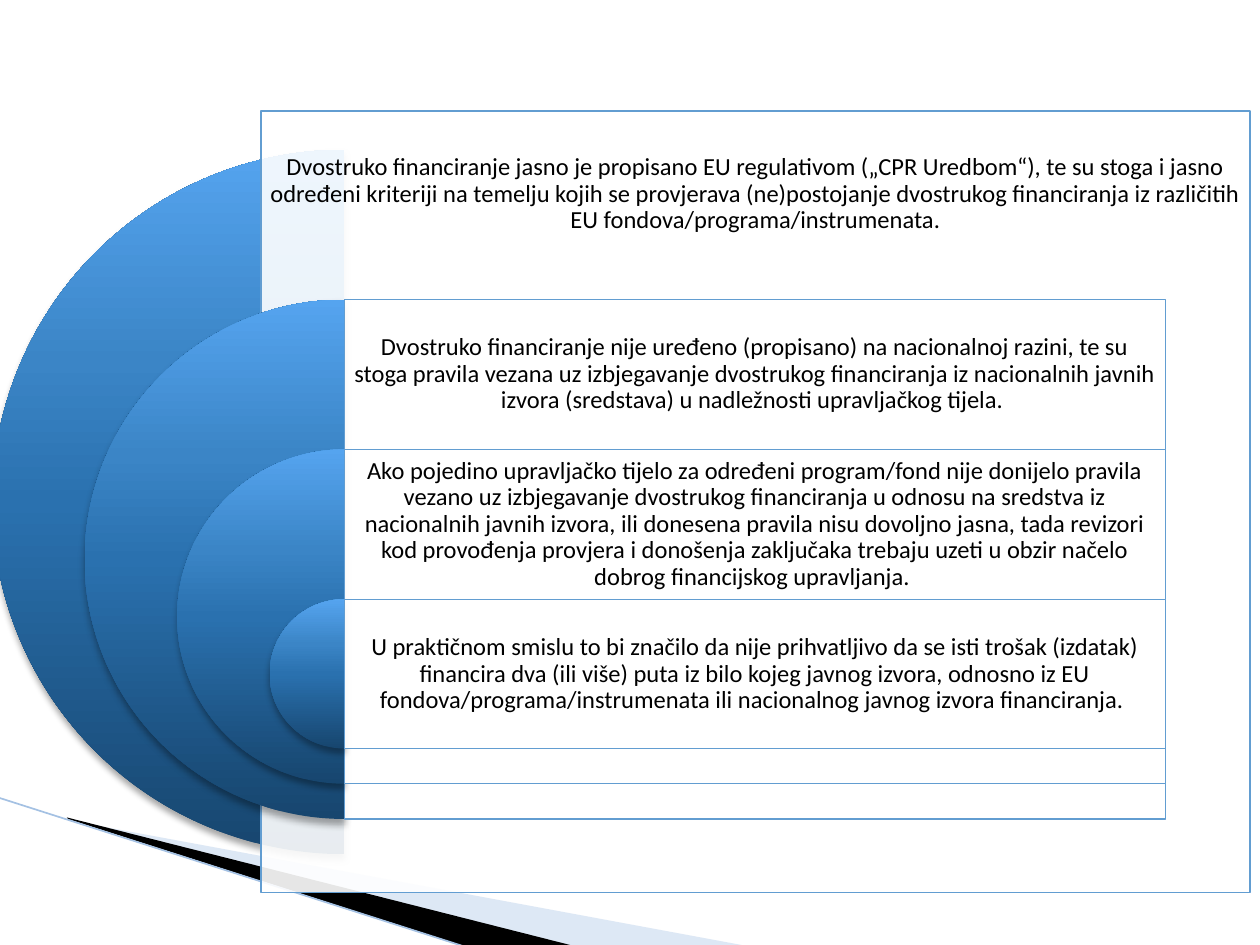
from lxml import etree
from pptx import Presentation
from pptx.dml.color import RGBColor
from pptx.enum.shapes import MSO_CONNECTOR, MSO_SHAPE
from pptx.enum.text import MSO_ANCHOR, PP_ALIGN
from pptx.oxml import parse_xml
from pptx.oxml.ns import nsdecls, qn
from pptx.util import Cm, Pt

WHITE = RGBColor(0xFF, 0xFF, 0xFF)
BLACK = RGBColor(0, 0, 0)
PANEL_BLUE = RGBColor(0x62, 0x9D, 0xD1)
SWOOSH_BLUE = RGBColor(0xAB, 0xC6, 0xE6)
EDGE_BLUE = RGBColor(0xA4, 0xC1, 0xE3)
PIE_STOPS = [
    (0, RGBColor(0x17, 0x46, 0x6F)),
    (50, RGBColor(0x2A, 0x71, 0xAF)),
    (70, RGBColor(0x3B, 0x85, 0xC6)),
    (100, RGBColor(0x55, 0xA4, 0xEF)),
]

STATEMENTS = [
    "Dvostruko financiranje jasno je propisano EU regulativom („CPR Uredbom“), te su stoga "
    "i jasno određeni kriteriji na temelju kojih se provjerava (ne)postojanje dvostrukog "
    "financiranja iz različitih EU fondova/programa/instrumenata.",
    "Dvostruko financiranje nije uređeno (propisano) na nacionalnoj razini, te su stoga "
    "pravila vezana uz izbjegavanje dvostrukog financiranja iz nacionalnih javnih izvora "
    "(sredstava) u nadležnosti upravljačkog tijela. ",
    "Ako pojedino upravljačko tijelo za određeni program/fond nije donijelo pravila vezano "
    "uz izbjegavanje dvostrukog financiranja u odnosu na sredstva iz nacionalnih javnih "
    "izvora, ili donesena pravila nisu dovoljno jasna, tada revizori kod provođenja provjera "
    "i donošenja zaključaka trebaju uzeti u obzir načelo dobrog financijskog upravljanja. ",
    "U praktičnom smislu to bi značilo da nije prihvatljivo da se isti trošak (izdatak) "
    "financira dva (ili više) puta iz bilo kojeg javnog izvora, odnosno iz EU "
    "fondova/programa/instrumenata ili nacionalnog javnog izvora financiranja. ",
]


def set_solid_fill(shape, color, opacity=100):
    """Fill a shape with one colour at the given opacity in percent."""
    shape.fill.solid()
    shape.fill.fore_color.rgb = color
    if opacity < 100:
        color_element = shape.element.spPr.find(qn("a:solidFill"))[0]
        etree.SubElement(color_element, qn("a:alpha"), val=str(opacity * 1000))


def add_swoosh(slide, left, top, points, color, opacity=100):
    """Draw a closed outline whose points are relative to left and top."""
    outline = [(left + Cm(x), top + Cm(y)) for x, y in points]
    builder = slide.shapes.build_freeform(*outline[0])
    builder.add_line_segments(outline[1:], close=True)
    swoosh = builder.convert_to_shape()
    swoosh.shadow.inherit = False
    set_solid_fill(swoosh, color, opacity)
    swoosh.line.fill.background()


def add_corner(slide, left, top):
    """Draw the pointed bands and the edge line in the bottom left corner."""
    add_swoosh(slide, left, top,
               [(1.4, 0.46), (15.11, 3), (11.58, 3), (1.4, 0.43)], SWOOSH_BLUE, 40)
    add_swoosh(slide, left, top,
               [(1.35, 0.4), (11.61, 3), (9.45, 3.02), (1.37, 0.43)], BLACK)
    edge = slide.shapes.add_connector(
        MSO_CONNECTOR.STRAIGHT, left - Cm(0.03), top, left + Cm(9.42), top + Cm(3.02))
    edge.line.color.rgb = EDGE_BLUE
    edge.line.width = Pt(0.95)
    etree.SubElement(edge.element.spPr, qn("a:effectLst"))


def add_half_disc(slide, left, top, diameter):
    """Draw the left half of a disc with a vertical gradient and a soft shadow."""
    disc = slide.shapes.add_shape(MSO_SHAPE.PIE, left, top, diameter, diameter)
    disc.adjustments[0] = 54
    disc.adjustments[1] = 162
    stops = "".join(
        f'<a:gs pos="{position * 1000}"><a:srgbClr val="{color}"/></a:gs>'
        for position, color in PIE_STOPS)
    properties = disc.element.spPr
    properties.append(parse_xml(
        f'<a:gradFill {nsdecls("a")} rotWithShape="1"><a:gsLst>{stops}</a:gsLst>'
        '<a:lin ang="16200000" scaled="0"/></a:gradFill>'))
    disc.line.fill.background()
    properties.append(parse_xml(
        f'<a:effectLst {nsdecls("a")}><a:outerShdw blurRad="{Pt(4)}" dist="{Pt(3)}" '
        'dir="5400000" rotWithShape="0"><a:srgbClr val="000000">'
        '<a:alpha val="35000"/></a:srgbClr></a:outerShdw></a:effectLst>'))


def add_statement(slide, left, top, width, height, text_height, statement):
    """Draw a framed panel with the statement centred in its upper part."""
    panel = slide.shapes.add_shape(MSO_SHAPE.RECTANGLE, left, top, width, height)
    panel.shadow.inherit = False
    set_solid_fill(panel, WHITE, 90)
    panel.line.color.rgb = PANEL_BLUE
    panel.line.width = Pt(0.75)

    frame = slide.shapes.add_textbox(left, top, width, text_height).text_frame
    frame.word_wrap = True
    frame.vertical_anchor = MSO_ANCHOR.MIDDLE
    frame.margin_left = frame.margin_right = Cm(0.15)
    frame.margin_top = frame.margin_bottom = Cm(0.15)
    frame.text = statement
    paragraph = frame.paragraphs[0]
    paragraph.alignment = PP_ALIGN.CENTER
    paragraph.line_spacing = 0.9
    paragraph.space_after = Pt(4.9)
    font = paragraph.runs[0].font
    font.name = "Calibri"
    font.size = Pt(14)
    font.color.rgb = BLACK


def add_nested_discs(slide, left, top, diameter):
    """Nest the half discs on one vertical axis, each with its statement."""
    axis = left + diameter // 2
    row_height = Cm(3.02)
    shrink = Cm(3.73)
    for level, statement in enumerate(STATEMENTS):
        size = diameter - level * shrink
        row_top = top + level * row_height
        add_half_disc(slide, axis - size // 2, row_top, size)
        if level == 0:
            add_statement(slide, axis - Cm(1.68), row_top - Cm(0.78),
                          Cm(19.94), Cm(15.75), Cm(3.35), statement)
        else:
            add_statement(slide, axis, row_top, Cm(16.56), size, row_height, statement)


def main():
    """Build and save the slide."""
    presentation = Presentation()
    presentation.slide_width = Cm(25.4)
    presentation.slide_height = Cm(19.05)
    slide = presentation.slides.add_slide(presentation.slide_layouts[6])
    add_corner(slide, Cm(0), Cm(16.08))
    add_nested_discs(slide, Cm(-0.16), Cm(3.02), Cm(14.2))
    presentation.save("out.pptx")


if __name__ == "__main__":
    main()
